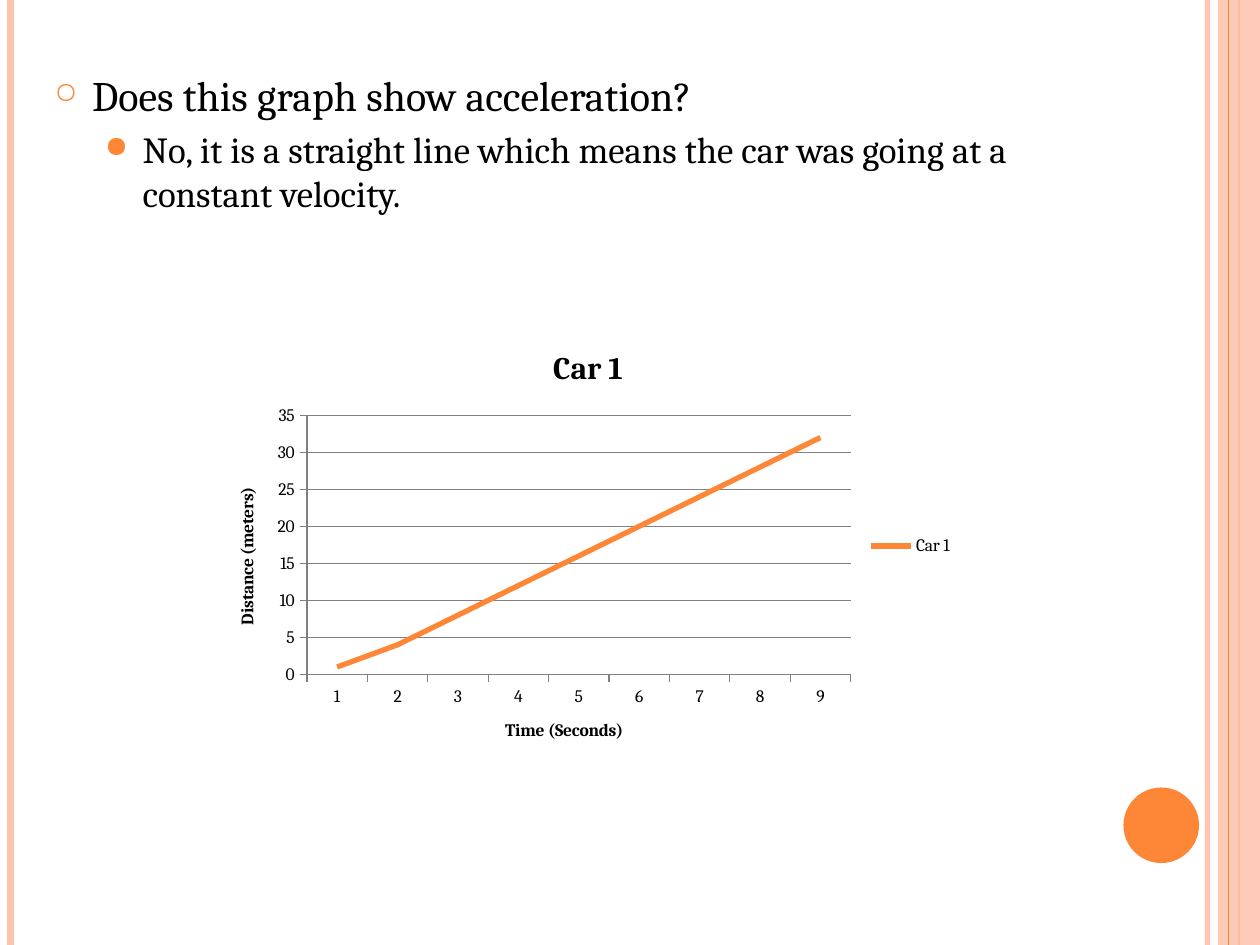
from lxml import etree
from pptx import Presentation
from pptx.chart.data import CategoryChartData
from pptx.dml.color import RGBColor
from pptx.enum.chart import XL_CHART_TYPE, XL_LEGEND_POSITION, XL_TICK_MARK
from pptx.enum.shapes import MSO_CONNECTOR, MSO_SHAPE
from pptx.oxml.ns import qn
from pptx.util import Pt

WIDTH, HEIGHT = 720, 540
FONT = "Cambria"
ORANGE, PEACH, BLACK, GRAY = "FE8637", "FEC3AE", "000000", "808080"


def rgb(value):
    return RGBColor.from_string(value)


def set_font(font, size, bold=False):
    font.name, font.size, font.bold = FONT, Pt(size), bold
    font.color.rgb = rgb(BLACK)


def set_alpha(fill_parent, percent):
    color = next(fill_parent.iter(qn("a:srgbClr")))
    etree.SubElement(color, qn("a:alpha"), val=str(percent * 1000))


def add_stripe(slide, x, color, width, alpha=100):
    line = slide.shapes.add_connector(
        MSO_CONNECTOR.STRAIGHT, Pt(x), Pt(0), Pt(x), Pt(HEIGHT))
    line.line.color.rgb = rgb(color)
    line.line.width = Pt(width)
    sp_pr = line._element.spPr
    if alpha < 100:
        set_alpha(sp_pr, alpha)
    etree.SubElement(sp_pr, qn("a:effectLst"))


def add_filled(slide, kind, box, color, alpha=100):
    sp = slide.shapes.add_shape(kind, *map(Pt, box))
    sp.shadow.inherit = False
    sp.fill.solid()
    sp.fill.fore_color.rgb = rgb(color)
    sp.line.fill.background()
    if alpha < 100:
        set_alpha(sp._element.spPr, alpha)


def add_frame(slide):
    """Side stripes, right-hand band and corner disc."""
    add_stripe(slide, 690, PEACH, 3, alpha=93)
    add_stripe(slide, 6, PEACH, 4.5)
    add_stripe(slide, 708, ORANGE, 1.5)
    add_filled(slide, MSO_SHAPE.RECTANGLE, (696, 0, WIDTH - 696, HEIGHT), PEACH, alpha=87)
    add_stripe(slide, 702, ORANGE, 0.75)
    add_filled(slide, MSO_SHAPE.OVAL, (642, 450, 43.2, 43.2), ORANGE)


def set_bullet(p, char, percent, indent, hanging=21.6):
    p_pr = p._p.get_or_add_pPr()
    p_pr.set("marL", str(Pt(indent)))
    p_pr.set("indent", str(-Pt(hanging)))
    color = etree.SubElement(p_pr, qn("a:buClr"))
    etree.SubElement(color, qn("a:srgbClr"), val=ORANGE)
    etree.SubElement(p_pr, qn("a:buSzPct"), val=str(percent * 1000))
    etree.SubElement(p_pr, qn("a:buChar"), char=char)


def add_question(slide, box):
    tf = slide.shapes.add_textbox(*map(Pt, box)).text_frame
    tf.word_wrap = True
    items = [
        ("Does this graph show acceleration?", 24, 6, "○", 70, 21.6),
        ("No, it is a straight line which means the car was going at a "
         "constant velocity.", 21, 4.2, "●", 80, 50.4),
    ]
    for level, (text, size, before, char, percent, indent) in enumerate(items):
        p = tf.add_paragraph() if level else tf.paragraphs[0]
        p.text = text
        p.level = level
        p.space_before = Pt(before)
        set_bullet(p, char, percent, indent)
        set_font(p.runs[0].font, size)


def set_title(owner, text, size):
    """Title a chart or an axis."""
    tf = (owner.chart_title if hasattr(owner, "chart_title") else owner.axis_title).text_frame
    tf.text = text
    set_font(tf.paragraphs[0].runs[0].font, size, bold=True)


def add_distance_chart(slide, box):
    data = CategoryChartData()
    data.categories = range(1, 10)
    data.add_series("Car 1", [1, *range(4, 33, 4)])
    chart = slide.shapes.add_chart(XL_CHART_TYPE.LINE, *map(Pt, box), data).chart
    set_font(chart.font, 10)
    set_title(chart, "Car 1", 18)
    chart.has_legend = True
    chart.legend.position = XL_LEGEND_POSITION.RIGHT
    chart.legend.include_in_layout = False

    for axis, title in ((chart.category_axis, "Time (Seconds)"),
                        (chart.value_axis, "Distance (meters)")):
        set_title(axis, title, 10)
        axis.major_tick_mark = XL_TICK_MARK.OUTSIDE
        axis.minor_tick_mark = XL_TICK_MARK.NONE
        axis.format.line.color.rgb = rgb(GRAY)
    grid = chart.value_axis.major_gridlines.format.line
    grid.color.rgb = rgb(GRAY)
    grid.width = Pt(0.75)

    plot = chart.plots[0]
    plot.vary_by_categories = False
    series = plot.series[0]
    series.smooth = False
    series.format.line.color.rgb = rgb(ORANGE)
    series.format.line.width = Pt(3)


def main():
    prs = Presentation()
    prs.slide_width, prs.slide_height = Pt(WIDTH), Pt(HEIGHT)
    slide = prs.slides.add_slide(prs.slide_layouts[6])
    add_frame(slide)
    add_question(slide, (24, 36, 624, 120))
    add_distance_chart(slide, (120, 186, 432, 252))
    prs.save("out.pptx")


if __name__ == "__main__":
    main()
